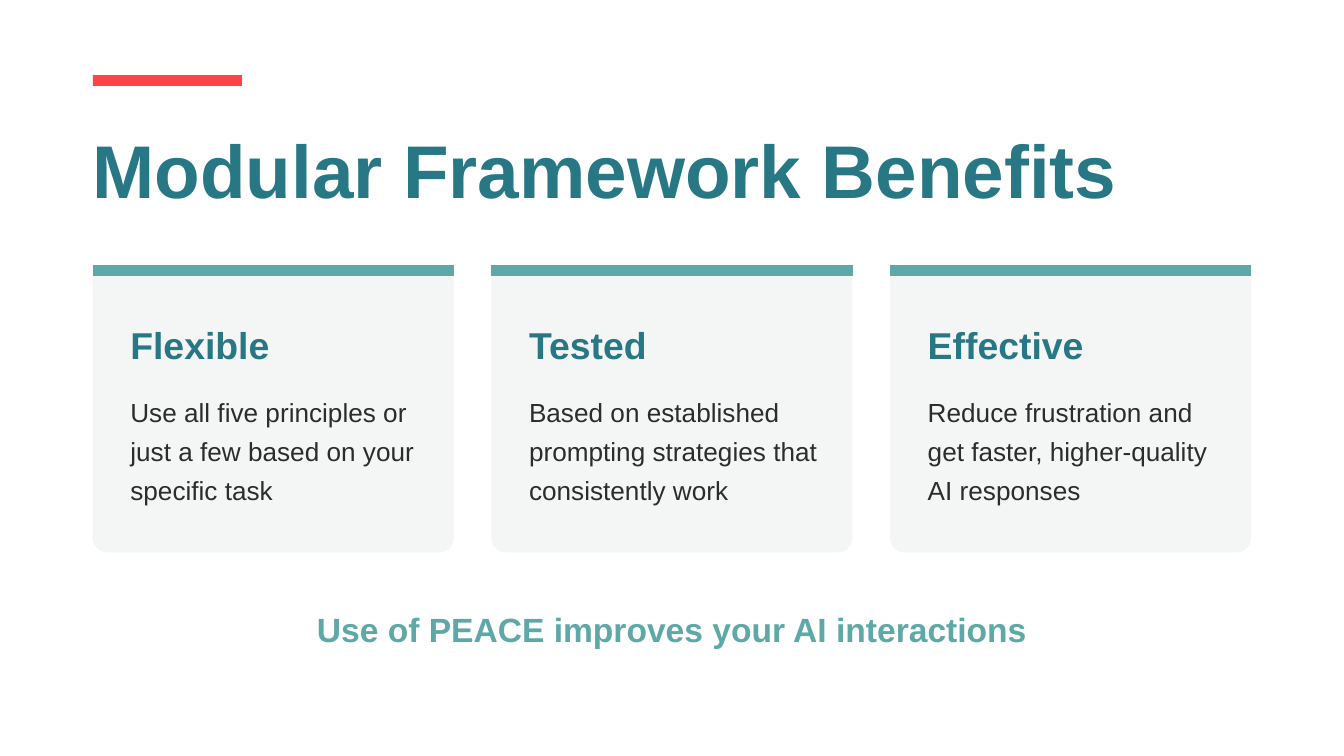
from lxml import etree
from pptx import Presentation
from pptx import util as u
from pptx.dml.color import RGBColor
from pptx.enum import shapes, text
from pptx.oxml.ns import qn

COLORS = {"accent": "FE4447", "heading": "277884", "teal": "5EA8A7",
          "card": "F4F6F6", "body": "2C2C2C", "background": "FFFFFF"}
FORMATS = {
    "title": {"size": u.Pt(40), "bold": True, "color": "heading"},
    "card_heading": {"size": u.Pt(20), "bold": True, "color": "heading"},
    "card_body": {"size": u.Pt(14), "bold": False, "color": "body"},
    "takeaway": {"size": u.Pt(18), "bold": True, "color": "teal"},
}
BENEFITS = [
    ("Flexible", "Use all five principles or just a few based on your specific task"),
    ("Tested", "Based on established prompting strategies that consistently work"),
    ("Effective", "Reduce frustration and get faster, higher-quality AI responses"),
]
PAGE_WIDTH = 10
PAGE_HEIGHT = PAGE_WIDTH * 9 / 16
MARGIN, CONTENT_WIDTH, CARD_GAP = 0.69, 8.62, 0.28


def rgb(name):
    return RGBColor.from_string(COLORS[name])


def inches(*lengths):
    return [u.Inches(length) for length in lengths]


def write_text(box, wording, style, align=text.PP_ALIGN.LEFT, line_spacing=None):
    """Fill a text box or placeholder with one paragraph, without insets."""
    frame = box.text_frame
    frame.text = wording
    settings = {"word_wrap": True, "auto_size": text.MSO_AUTO_SIZE.NONE,
                "vertical_anchor": text.MSO_ANCHOR.TOP, "margin_left": 0,
                "margin_top": 0, "margin_right": 0, "margin_bottom": 0}
    for name, value in settings.items():
        setattr(frame, name, value)
    para = frame.paragraphs[0]
    para.alignment = align
    para.line_spacing = line_spacing
    font = para.runs[0].font
    font.name = "Arial"
    for name, value in FORMATS[style].items():
        if name == "color":
            font.color.rgb = rgb(value)
        else:
            setattr(font, name, value)


def add_text(page, area, wording, style, **options):
    box = page.shapes.add_textbox(*inches(*area))
    write_text(box, wording, style, **options)


def add_block(page, kind, area, color):
    block = page.shapes.add_shape(kind, *inches(*area))
    block.shadow.inherit = False
    block.fill.solid()
    block.fill.fore_color.rgb = rgb(color)
    block.line.fill.background()
    return block


def add_header(page, left, top):
    add_block(page, shapes.MSO_SHAPE.RECTANGLE, (left, top, 1.11, 0.08), "accent")
    title = page.shapes.title
    title.left, title.top, title.width, title.height = inches(left, top + 0.36, 8.78, 0.64)
    write_text(title, "Modular Framework Benefits", "title")


def add_card(page, left, top, width, height, heading, body):
    card = add_block(page, shapes.MSO_SHAPE.ROUNDED_RECTANGLE,
                     (left, top, width, height), "card")
    card.adjustments[0] = 0.05
    edge = page.shapes.add_connector(
        shapes.MSO_CONNECTOR.STRAIGHT,
        *inches(left, top + 0.04, left + width, top + 0.04))
    edge.line.color.rgb = rgb("teal")
    edge.line.width = u.Pt(6)
    etree.SubElement(edge.element.spPr, qn("a:effectLst"))
    add_text(page, (left + 0.28, top + 0.43, 2.17, 0.32), heading, "card_heading")
    add_text(page, (left + 0.28, top + 0.92, 2.17, 0.88), body, "card_body",
             line_spacing=u.Pt(21))


def add_cards(page, left, top, width, height):
    """Share the width equally among the benefit cards."""
    count = len(BENEFITS)
    card_width = (width - (count - 1) * CARD_GAP) / count
    for index, (heading, body) in enumerate(BENEFITS):
        card_left = left + index * (card_width + CARD_GAP)
        add_card(page, card_left, top, card_width, height, heading, body)


def main():
    deck = Presentation()
    deck.slide_width, deck.slide_height = inches(PAGE_WIDTH, PAGE_HEIGHT)
    page = deck.slides.add_slide(deck.slide_layouts[5])
    page.background.fill.solid()
    page.background.fill.fore_color.rgb = rgb("background")
    add_header(page, MARGIN, 0.56)
    add_cards(page, MARGIN, 1.97, CONTENT_WIDTH, 2.14)
    add_text(page, (0.61, 4.53, 8.78, 0.29), "Use of PEACE improves your AI interactions",
             "takeaway", align=text.PP_ALIGN.CENTER)
    deck.save("out.pptx")


if __name__ == "__main__":
    main()
